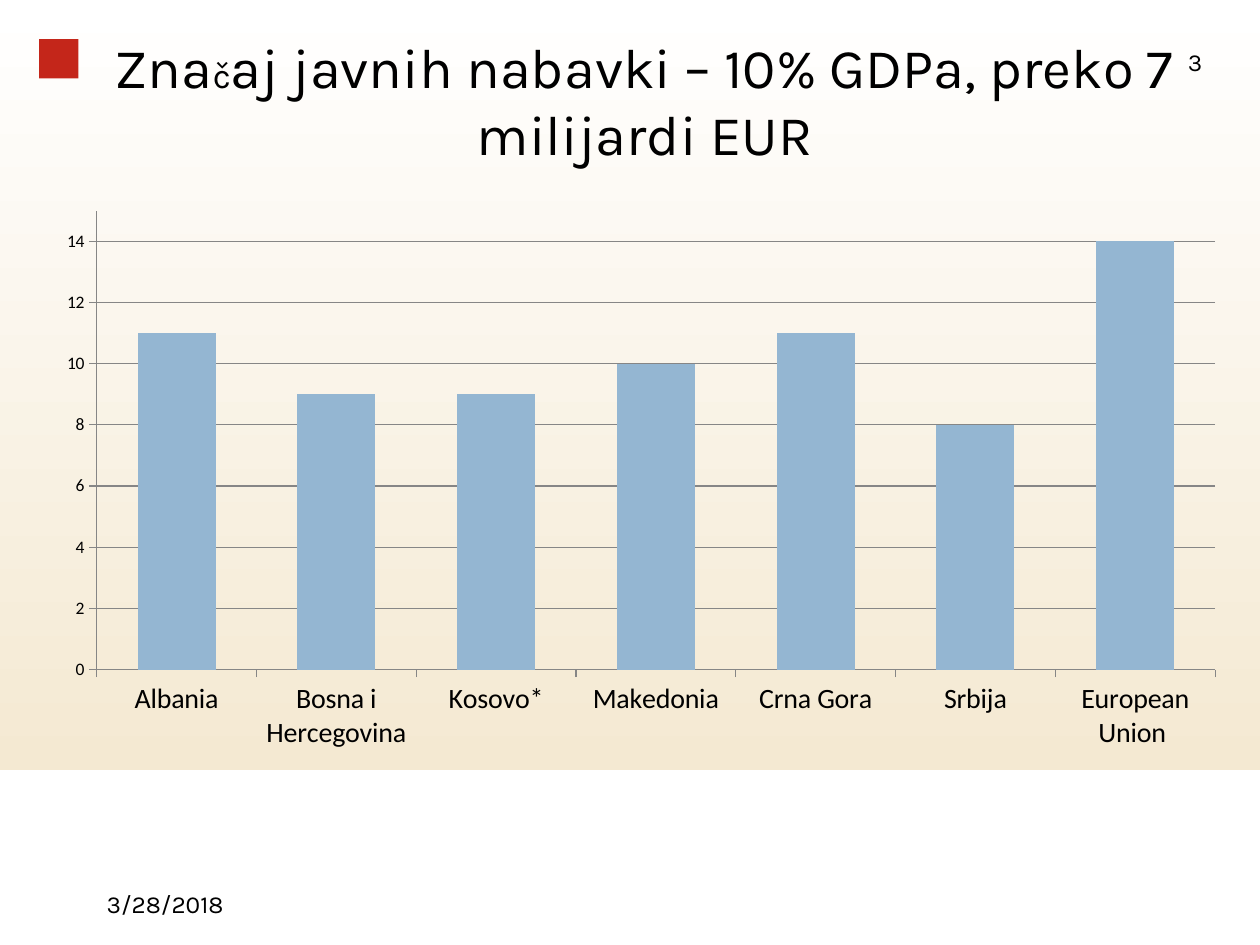
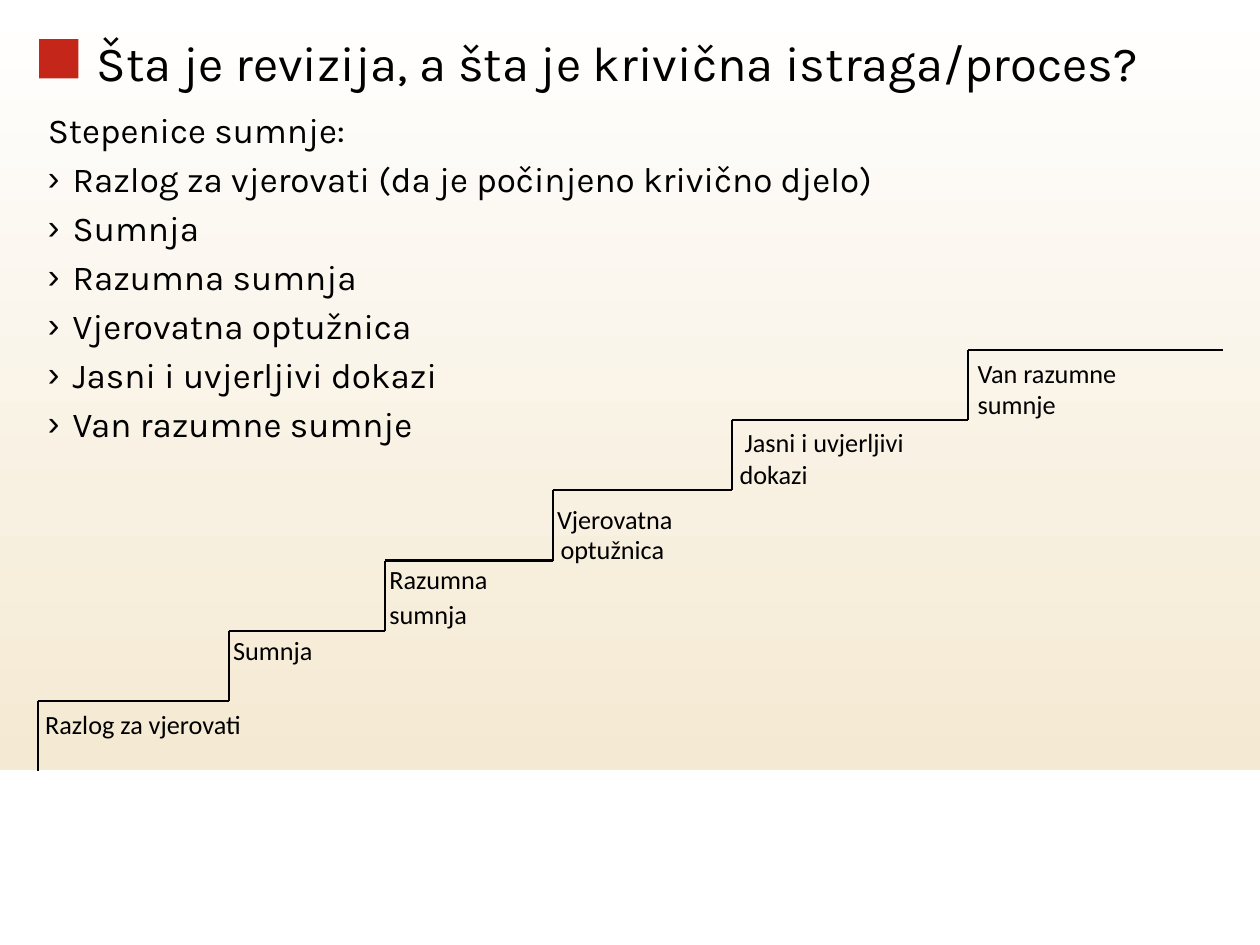
from dataclasses import dataclass

from lxml.etree import SubElement
from pptx import Presentation
from pptx.chart.data import CategoryChartData
from pptx.dml.color import RGBColor
from pptx.enum.chart import XL_CHART_TYPE as ChartType, XL_TICK_MARK as Tick
from pptx.enum.shapes import MSO_CONNECTOR as Connector, MSO_SHAPE as Preset
from pptx.enum.text import MSO_ANCHOR as Anchor, MSO_AUTO_SIZE as AutoSize, PP_ALIGN as Align
from pptx.oxml import parse_xml
from pptx.oxml.ns import nsdecls, qn
from pptx.util import Cm, Pt


@dataclass(frozen=True)
class Theme:
    heading_font: str = "Karla"
    label_font: str = "Calibri"
    ink: str = "000000"
    band_top: str = "FFFFFF"
    band_bottom: str = "F4E9D2"
    marker: str = "C4261A"
    column: str = "94B6D2"
    grid: str = "868686"
    chart_title: int = 32
    small_letter: int = 20
    list_title: int = 28
    body: int = 20
    step: int = 15
    footer: int = 14
    category: int = 16
    value: int = 10


THEME = Theme()

CHART_TITLE = [("Zna", THEME.chart_title), ("č", THEME.small_letter),
               ("aj javnih nabavki – 10% GDPa, preko 7 milijardi EUR", THEME.chart_title)]
DATE, PAGE_NUMBER = "3/28/2018", "3"
GDP_SHARES = {
    "Albania": 11, "Bosna i Hercegovina": 9, "Kosovo*": 9, "Makedonia": 10,
    "Crna Gora": 11, "Srbija": 8, "European Union ": 14,
}
PLOT_AREA = {"x": 0.06, "y": 0.044, "w": 0.94, "h": 0.787}

LIST_TITLE = "Šta je revizija, a šta je krivična istraga/proces?"
LIST_HEADING = "Stepenice sumnje:"
LEVELS = ["Razlog za vjerovati (da je počinjeno krivično djelo)", "Sumnja", "Razumna sumnja",
          "Vjerovatna optužnica", "Jasni i uvjerljivi dokazi", "Van razumne sumnje"]

STEP_EDGES = [0.76, 4.61, 7.76, 11.14, 14.75, 19.52, 24.66]
FIRST_STEP_TOP, STEP_RISE = 14.13, 1.415
STEP_LABELS = [
    [("Razlog za vjerovati", 0.15, 0.15)],
    [("Sumnja", 0.09, 0.07)],
    [("Razumna", 0.09, 0.06), ("sumnja", 0.09, 0.77)],
    [("Vjerovatna", 0.09, 0.26), ("optužnica", 0.16, 0.87)],
    [("Jasni i uvjerljivi", 0.26, 0.13), ("dokazi", 0.16, 0.76)],
    [("Van razumne", 0.19, 0.14), ("sumnje", 0.19, 0.77)],
]


def color(value):
    return RGBColor.from_string(value)


def style_font(font, size, name):
    font.size = Pt(size)
    font.name = name
    font.bold = False
    font.color.rgb = color(THEME.ink)


def write(paragraph, text, size=THEME.body, font=THEME.heading_font, align=Align.LEFT):
    paragraph.alignment = align
    for words, points in [(text, size)] if isinstance(text, str) else text:
        run = paragraph.add_run()
        run.text = words
        style_font(run.font, points, font)


def place(shape, left, top, width, height):
    shape.left, shape.top, shape.width, shape.height = map(Cm, (left, top, width, height))


def add_label(slide, text, box, inset=True, anchor=Anchor.MIDDLE, **text_format):
    shape = slide.shapes.add_textbox(*map(Cm, box))
    frame = shape.text_frame
    frame.vertical_anchor = anchor
    frame.word_wrap = inset
    if not inset:
        frame.margin_left = frame.margin_right = frame.margin_top = frame.margin_bottom = 0
    write(frame.paragraphs[0], text, **text_format)


def open_placeholder(shape, box):
    place(shape, *box)
    frame = shape.text_frame
    frame.auto_size = AutoSize.NONE
    frame.vertical_anchor = Anchor.TOP
    return frame


def set_title(slide, text, box, **text_format):
    write(open_placeholder(slide.shapes.title, box).paragraphs[0], text, **text_format)


def decorate_master(presentation, slide):
    band = slide.shapes.add_shape(Preset.RECTANGLE, 0, 0, Cm(25.4), Cm(15.52))
    band.fill.gradient()
    band.fill.gradient_angle = 90
    for stop, shade in zip(band.fill.gradient_stops, (THEME.band_bottom, THEME.band_top)):
        stop.color.rgb = color(shade)
    marker = slide.shapes.add_shape(Preset.RECTANGLE, Cm(0.79), Cm(0.79), Cm(0.79), Cm(0.79))
    marker.fill.solid()
    marker.fill.fore_color.rgb = color(THEME.marker)
    tree = presentation.slide_master.shapes._spTree
    for index, shape in enumerate((band, marker)):
        shape.shadow.inherit = False
        shape.line.fill.background()
        shape._element.nvSpPr.cNvPr.set("id", str(100 + index))
        tree.insert(2 + index, shape._element)


def set_plot_area(chart):
    plot_area = chart._chartSpace.chart.plotArea
    for old_layout in plot_area.findall(qn("c:layout")):
        plot_area.remove(old_layout)
    settings = {"layoutTarget": "inner", "xMode": "edge", "yMode": "edge", **PLOT_AREA}
    items = "".join(f'<c:{name} val="{value}"/>' for name, value in settings.items())
    plot_area.insert(0, parse_xml(
        f'<c:layout {nsdecls("c")}><c:manualLayout>{items}</c:manualLayout></c:layout>'))


def add_gdp_chart(slide):
    data = CategoryChartData()
    data.categories = list(GDP_SHARES)
    data.add_series("Series 1", list(GDP_SHARES.values()))
    chart = slide.shapes.add_chart(
        ChartType.COLUMN_CLUSTERED, Cm(0.51), Cm(3.73), Cm(24), Cm(11.76), data).chart
    chart.has_legend = chart.has_title = False
    style_font(chart.font, THEME.value, THEME.label_font)
    plot = chart.plots[0]
    plot.gap_width = 105
    plot.vary_by_categories = False
    fill = plot.series[0].format.fill
    fill.solid()
    fill.fore_color.rgb = color(THEME.column)
    value_axis, category_axis = chart.value_axis, chart.category_axis
    value_axis.minimum_scale, value_axis.maximum_scale, value_axis.major_unit = 0, 15, 2
    value_axis.has_major_gridlines = True
    for axis, size in ((value_axis, THEME.value), (category_axis, THEME.category)):
        axis.major_tick_mark = Tick.OUTSIDE
        style_font(axis.tick_labels.font, size, THEME.label_font)
    for part in (value_axis, category_axis, value_axis.major_gridlines):
        part.format.line.color.rgb = color(THEME.grid)
        part.format.line.width = Pt(0.75)
    set_plot_area(chart)


def set_bullet(paragraph, character):
    properties = paragraph._p.get_or_add_pPr()
    indent = Cm(0.5) if character else 0
    properties.set("marL", str(indent))
    properties.set("indent", str(-indent))
    if character:
        SubElement(properties, qn("a:buChar")).set("char", character)
    else:
        SubElement(properties, qn("a:buNone"))


def fill_list(frame):
    for index, text in enumerate([LIST_HEADING, *LEVELS]):
        paragraph = frame.add_paragraph() if index else frame.paragraphs[0]
        set_bullet(paragraph, "›" if index else None)
        paragraph.line_spacing = Pt(22)
        paragraph.space_before = Pt(4 if index else 0)
        paragraph.space_after = Pt(2)
        write(paragraph, text)


def add_line(slide, *ends):
    line = slide.shapes.add_connector(Connector.STRAIGHT, *map(Cm, ends))
    line.line.color.rgb = color(THEME.ink)
    line.line.width = Pt(1.25)
    SubElement(line._element.spPr, qn("a:effectLst"))


def add_stairs(slide):
    for index, labels in enumerate(STEP_LABELS):
        left, right = STEP_EDGES[index:index + 2]
        top = FIRST_STEP_TOP - index * STEP_RISE
        add_line(slide, left, top + STEP_RISE, left, top)
        add_line(slide, left, top, right, top)
        for text, across, down in labels:
            add_label(slide, text, (left + across, top + down, 4, 0.64), inset=False,
                      anchor=Anchor.TOP, size=THEME.step, font=THEME.label_font)


def main():
    presentation = Presentation()
    presentation.slide_width, presentation.slide_height = Cm(25.4), Cm(19.05)

    chart_slide = presentation.slides.add_slide(presentation.slide_layouts[5])
    decorate_master(presentation, chart_slide)
    add_label(chart_slide, DATE, (1.9, 17.73, 3.61, 0.99), size=THEME.footer)
    add_label(chart_slide, PAGE_NUMBER, (22.1, 0.74, 2.39, 1.02),
              size=THEME.footer, align=Align.RIGHT)
    set_title(chart_slide, CHART_TITLE, (1.9, 0.53, 22.2, 1.8), align=Align.CENTER)
    add_gdp_chart(chart_slide)

    stairs_slide = presentation.slides.add_slide(presentation.slide_layouts[1])
    set_title(stairs_slide, LIST_TITLE, (1.7, 0.53, 22.86, 1.3), size=THEME.list_title)
    fill_list(open_placeholder(stairs_slide.placeholders[1], (0.71, 2.13, 22.63, 10.57)))
    add_stairs(stairs_slide)

    presentation.save("out.pptx")


if __name__ == "__main__":
    main()
